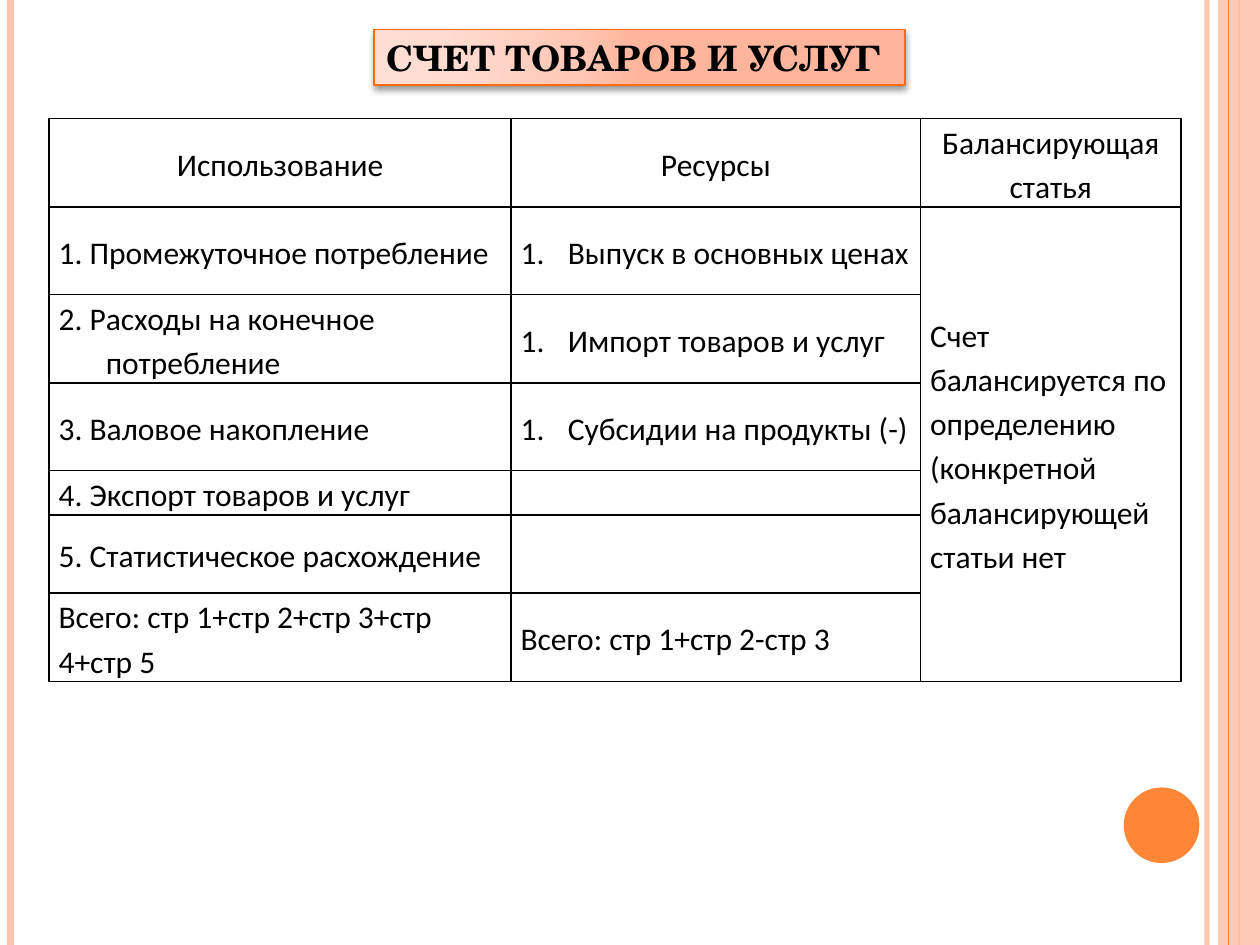
from typing import NamedTuple

from lxml import etree
from pptx import Presentation
from pptx.dml.color import RGBColor
from pptx.enum.shapes import MSO_CONNECTOR, MSO_SHAPE
from pptx.enum.text import MSO_ANCHOR, PP_ALIGN
from pptx.oxml import parse_xml
from pptx.oxml.ns import nsdecls, qn
from pptx.util import Pt

STRAIGHT = MSO_CONNECTOR.STRAIGHT
RECTANGLE, OVAL = MSO_SHAPE.RECTANGLE, MSO_SHAPE.OVAL
MIDDLE = MSO_ANCHOR.MIDDLE
LEFT, CENTER = PP_ALIGN.LEFT, PP_ALIGN.CENTER

PEACH = RGBColor(0xFE, 0xC3, 0xAE)
ORANGE = RGBColor(0xFE, 0x86, 0x37)
TITLE_LINE = RGBColor(0xFF, 0x6B, 0x0A)
BLACK = RGBColor(0, 0, 0)

PAGE_WIDTH, PAGE_HEIGHT = 720, 540
COLUMN_WIDTHS = (264, 234, 148.7)
ROW_HEIGHTS = (50, 50, 50, 50, 25.6, 44.6, 50)
HANGING = 27


class Stripe(NamedTuple):
    x: float
    width: float
    color: RGBColor
    opacity: int = 100


class Entry(NamedTuple):
    text: str
    align: PP_ALIGN = LEFT
    hanging: bool = False
    numbered: bool = False


def header(text: str) -> Entry:
    return Entry(text, align=CENTER)


def item(text: str) -> Entry:
    return Entry(text, hanging=True)


def numbered(text: str) -> Entry:
    return Entry(text, hanging=True, numbered=True)


STRIPES_BELOW_BAND = (
    Stripe(689.8, 3, PEACH, 93),
    Stripe(6, 4.5, PEACH),
    Stripe(708, 1.5, ORANGE),
)
# The inner line lies above the band
BAND_LINE = Stripe(702, 0.75, ORANGE)

ROWS = (
    (header("Использование"), header("Ресурсы"), header("Балансирующая статья")),
    (item("1. Промежуточное потребление"), numbered("Выпуск в основных ценах"),
     Entry("Счет балансируется по определению (конкретной балансирующей статьи нет")),
    (item("2. Расходы на конечное потребление"), numbered("Импорт товаров и услуг")),
    (item("3. Валовое накопление"), numbered("Субсидии на продукты (-)")),
    (item("4. Экспорт товаров и услуг"),),
    (item("5. Статистическое расхождение"),),
    (Entry("Всего: стр 1+стр 2+стр 3+стр 4+стр 5"), Entry("Всего: стр 1+стр 2-стр 3")),
)

TITLE_GRADIENT = f"""<a:gradFill {nsdecls('a')} rotWithShape="1"><a:gsLst>
<a:gs pos="0"><a:srgbClr val="FFDED5"/></a:gs>
<a:gs pos="30000"><a:srgbClr val="FFDBD0"/></a:gs>
<a:gs pos="75000"><a:srgbClr val="FFC8B6"/></a:gs>
<a:gs pos="100000"><a:srgbClr val="FFB59B"/></a:gs></a:gsLst>
<a:path path="circle"><a:fillToRect l="5000" t="100000" r="120000" b="10000"/></a:path>
</a:gradFill>"""
TITLE_SHADOW = f"""<a:outerShdw {nsdecls('a')} blurRad="{Pt(4)}" dist="{Pt(2)}"
dir="5400000" rotWithShape="0"><a:srgbClr val="000000"><a:alpha val="40000"/></a:srgbClr>
</a:outerShdw>"""


def set_opacity(properties, percent: int) -> None:
    color = next(properties.iter(qn("a:srgbClr")))
    etree.SubElement(color, qn("a:alpha")).set("val", str(percent * 1000))


def style_text(paragraph, font_name: str, size: float, bold: bool = False) -> None:
    for span in paragraph.runs:
        span.font.name = font_name
        span.font.size = Pt(size)
        span.font.bold = bold
        span.font.color.rgb = BLACK


def add_stripe(page, stripe: Stripe) -> None:
    x = Pt(stripe.x)
    line = page.shapes.add_connector(STRAIGHT, x, 0, x, Pt(PAGE_HEIGHT))
    line.line.color.rgb = stripe.color
    line.line.width = Pt(stripe.width)
    properties = line._element.spPr
    if stripe.opacity < 100:
        set_opacity(properties, stripe.opacity)
    etree.SubElement(properties, qn("a:effectLst"))


def add_plain_shape(page, kind, left: float, top: float, width: float,
                    height: float, color: RGBColor):
    shape = page.shapes.add_shape(kind, Pt(left), Pt(top), Pt(width), Pt(height))
    shape.shadow.inherit = False
    shape.fill.solid()
    shape.fill.fore_color.rgb = color
    shape.line.fill.background()
    return shape


def add_decoration(page) -> None:
    for stripe in STRIPES_BELOW_BAND:
        add_stripe(page, stripe)
    band = add_plain_shape(page, RECTANGLE, 696, 0, PAGE_WIDTH - 696, PAGE_HEIGHT, PEACH)
    set_opacity(band._element.spPr, 87)
    add_stripe(page, BAND_LINE)
    add_plain_shape(page, OVAL, 642.2, 450, 43.2, 43.2, ORANGE)


def add_title(page) -> None:
    box = add_plain_shape(page, RECTANGLE, 213.8, 16.8, 303.4, 31.6, PEACH)
    properties = box._element.spPr
    properties.replace(properties.find(qn("a:solidFill")), parse_xml(TITLE_GRADIENT))
    box.line.color.rgb = TITLE_LINE
    box.line.width = Pt(1)
    properties.find(qn("a:effectLst")).append(parse_xml(TITLE_SHADOW))
    frame = box.text_frame
    frame.word_wrap = False
    frame.text = "СЧЕТ ТОВАРОВ И УСЛУГ"
    frame.paragraphs[0].alignment = LEFT
    style_text(frame.paragraphs[0], "TeX Gyre Schola", 20, bold=True)


def format_cell(cell) -> None:
    """Clear the fill, set the insets and draw a thin black border."""
    cell.fill.background()
    cell.vertical_anchor = MIDDLE
    cell.margin_left = cell.margin_right = Pt(5.4)
    cell.margin_top = cell.margin_bottom = 0
    properties = cell._tc.get_or_add_tcPr()
    for position, side in enumerate(("lnL", "lnR", "lnT", "lnB")):
        properties.insert(position, parse_xml(
            f'<a:{side} {nsdecls("a")} w="{Pt(1)}"><a:solidFill>'
            f'<a:srgbClr val="{BLACK}"/></a:solidFill></a:{side}>'))


def fill_cell(cell, entry: Entry) -> None:
    cell.text_frame.text = entry.text
    paragraph = cell.text_frame.paragraphs[0]
    paragraph.alignment = entry.align
    paragraph.line_spacing = 1.15
    style_text(paragraph, "Calibri", 18)
    properties = paragraph._p.get_or_add_pPr()
    if entry.hanging:
        properties.set("marL", str(Pt(HANGING)))
        properties.set("indent", str(-Pt(HANGING)))
    if entry.numbered:
        etree.SubElement(properties, qn("a:buFont")).set("typeface", "+mj-lt")
        etree.SubElement(properties, qn("a:buAutoNum")).set("type", "arabicPeriod")


def add_account_table(page) -> None:
    table = page.shapes.add_table(
        len(ROW_HEIGHTS), len(COLUMN_WIDTHS), Pt(28.1), Pt(67.7),
        Pt(sum(COLUMN_WIDTHS)), Pt(sum(ROW_HEIGHTS))).table
    table.first_row = table.horz_banding = False
    for column, width in zip(table.columns, COLUMN_WIDTHS):
        column.width = Pt(width)
    for row, height in zip(table.rows, ROW_HEIGHTS):
        row.height = Pt(height)
    for cell in table.iter_cells():
        format_cell(cell)
    table.cell(1, 2).merge(table.cell(len(ROW_HEIGHTS) - 1, 2))
    for row, entries in enumerate(ROWS):
        for column, entry in enumerate(entries):
            fill_cell(table.cell(row, column), entry)


def main() -> None:
    deck = Presentation()
    deck.slide_width, deck.slide_height = Pt(PAGE_WIDTH), Pt(PAGE_HEIGHT)
    page = deck.slides.add_slide(deck.slide_layouts[6])
    add_decoration(page)
    add_title(page)
    add_account_table(page)
    deck.save("out.pptx")


if __name__ == "__main__":
    main()
